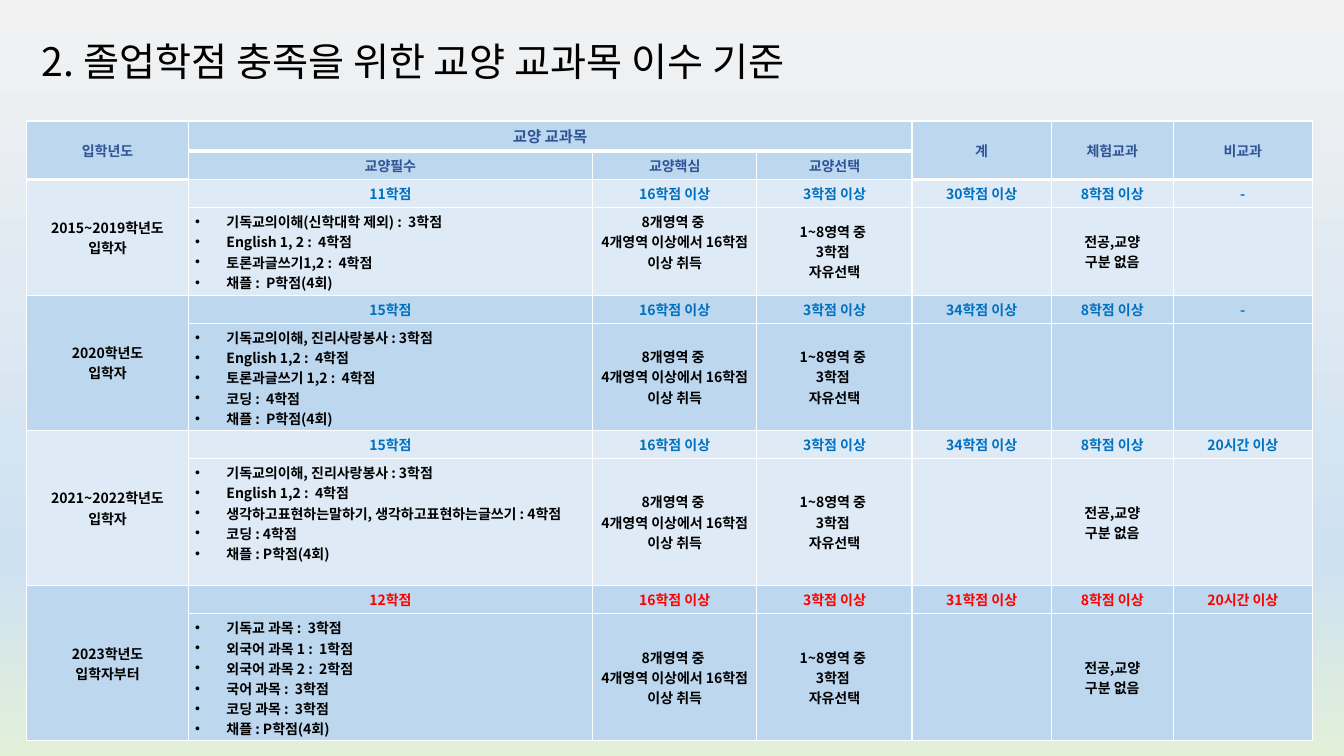
from dataclasses import dataclass

from lxml.etree import SubElement
from pptx import Presentation
from pptx.dml.color import RGBColor
from pptx.enum.text import MSO_ANCHOR, PP_ALIGN
from pptx.oxml import parse_xml
from pptx.oxml.ns import nsdecls, qn
from pptx.slide import Slide
from pptx.table import Table, _Cell
from pptx.text.text import _Paragraph
from pptx.util import Inches, Pt

BLACK = RGBColor(0x00, 0x00, 0x00)
WHITE = RGBColor(0xFF, 0xFF, 0xFF)
NAVY = RGBColor(0x2F, 0x55, 0x97)
BLUE = RGBColor(0x00, 0x70, 0xC0)
RED = RGBColor(0xFF, 0x00, 0x00)
PALE = RGBColor(0xDE, 0xEB, 0xF7)
SKY = RGBColor(0xBD, 0xD7, 0xEE)
GRAY = RGBColor(0xF2, 0xF2, 0xF2)
MIST = RGBColor(0xCE, 0xE1, 0xF2)
GREEN = RGBColor(0xE2, 0xF0, 0xD9)

FACE = "Noto Sans CJK KR"
WIDE, HIGH = Inches(13.33), Inches(7.5)
COLS = (1.6, 4.01, 1.63, 1.54, 1.38, 1.21, 1.38)
LINE = 0.28
TALL = (0, 4, 5, 6)  # header columns that span both header rows
MID, TOP = MSO_ANCHOR.MIDDLE, MSO_ANCHOR.TOP

CORE = ["8개영역 중 ", "4개영역 이상에서 16학점 이상 취득"]
FREE = ["1~8영역 중 ", "3학점 ", "자유선택"]
BOTH = ["전공,교양", "구분 없음"]


@dataclass
class Group:
    year: list[str]
    need: str
    total: str
    extra: str
    items: list[str]
    height: float
    trial: list[str]
    fill: RGBColor
    hue: RGBColor = BLUE
    anchor: MSO_ANCHOR = MID


GROUPS = [
    Group(["2015~2019학년도", "입학자"], "11학점", "30학점 이상", "-",
          ["기독교의이해(신학대학 제외) :  3학점", "English 1, 2 :  4학점",
           "토론과글쓰기1,2 :  4학점", "채플 :  P학점(4회)"],
          0.87, BOTH, PALE, anchor=TOP),
    Group(["2020학년도", "입학자"], "15학점", "34학점 이상", "-",
          ["기독교의이해, 진리사랑봉사 : 3학점", "English 1,2 :  4학점",
           "토론과글쓰기 1,2 :  4학점", "코딩 :  4학점", "채플 :  P학점(4회)"],
          1.06, [], SKY),
    Group(["2021~2022학년도", "입학자"], "15학점", "34학점 이상", "20시간 이상",
          ["기독교의이해, 진리사랑봉사 : 3학점", "English 1,2 :  4학점",
           "생각하고표현하는말하기, 생각하고표현하는글쓰기 : 4학점",
           "코딩 : 4학점", "채플 : P학점(4회)"],
          1.26, BOTH, PALE),
    Group(["2023학년도", "입학자부터"], "12학점", "31학점 이상", "20시간 이상",
          ["기독교 과목 :  3학점", "외국어 과목 1 :  1학점",
           "외국어 과목 2 :  2학점", "국어 과목 :  3학점",
           "코딩 과목 :  3학점", "채플 : P학점(4회)"],
          1.26, BOTH, SKY, RED),
]


def style(para: _Paragraph, size: float, hue: RGBColor, bold: bool) -> None:
    font = para.font
    font.size, font.bold, font.name = Pt(size), bold, FACE
    font.color.rgb = hue
    props = para._p.pPr.find(qn("a:defRPr"))
    props.find(qn("a:latin")).addnext(
        parse_xml(f'<a:ea {nsdecls("a")} typeface="{FACE}"/>'))


def write(cell: _Cell, lines: list[str], hue: RGBColor = BLACK,
          size: float = 10, anchor: MSO_ANCHOR = MID,
          list_on: bool = False) -> None:
    cell.vertical_anchor = anchor
    frame = cell.text_frame
    for num, line in enumerate(lines or [""]):
        para = frame.add_paragraph() if num else frame.paragraphs[0]
        para.text = line
        if list_on:
            props = para._p.get_or_add_pPr()
            props.set("marL", str(Inches(0.31)))
            props.set("indent", str(-Inches(0.31)))
            SubElement(props, qn("a:buFont")).set("typeface", "Arial")
            SubElement(props, qn("a:buChar")).set("char", "•")
        else:
            para.alignment = PP_ALIGN.CENTER
        style(para, size, hue, True)


def frame_cell(cell: _Cell, row: int, col: int, fill: RGBColor) -> None:
    cell.margin_left = cell.margin_right = Inches(0.07)
    cell.margin_top = cell.margin_bottom = Inches(0.04)
    cell.fill.solid()
    cell.fill.fore_color.rgb = fill
    upper = 3 if row == 1 or (row == 2 and col in TALL) else 1
    lower = 3 if row == 0 or (row == 1 and col in TALL) else 1
    sides = {"lnL": 1, "lnR": 1, "lnT": upper, "lnB": lower}
    for place, (side, width) in enumerate(sides.items()):
        cell._tc.tcPr.insert(place, parse_xml(
            f'<a:{side} {nsdecls("a")} w="{Pt(width)}"><a:solidFill>'
            f'<a:srgbClr val="{WHITE}"/></a:solidFill></a:{side}>'))


def paint_back(slide: Slide) -> None:
    fill = slide.background.fill
    fill.gradient()
    fill.gradient_angle = 270
    stops = slide._element.find(".//" + qn("a:gsLst"))
    for old in list(stops):
        stops.remove(old)
    for spot, hue, alpha in ((0, GRAY, 100), (74, MIST, 100), (100, GREEN, 32)):
        stop = SubElement(stops, qn("a:gs"), pos=str(spot * 1000))
        tint = SubElement(stop, qn("a:srgbClr"), val=str(hue))
        if alpha < 100:
            SubElement(tint, qn("a:alpha"), val=str(alpha * 1000))


def add_title(slide: Slide) -> None:
    box = slide.shapes.add_textbox(int(WIDE * 0.02), int(HIGH * 0.03),
                                   int(WIDE * 0.61), int(HIGH * 0.11))
    frame = box.text_frame
    frame.word_wrap = True
    frame.vertical_anchor = MID
    frame.margin_left, frame.margin_right = Inches(0.15), Inches(0.07)
    frame.margin_top = frame.margin_bottom = Inches(0.04)
    para = frame.paragraphs[0]
    para.text = "2. 졸업학점 충족을 위한 교양 교과목 이수 기준"
    para.line_spacing = 0.9
    style(para, 28, BLACK, False)


def fill_head(table: Table) -> None:
    for col, name in zip(TALL, ("입학년도", "계", "체험교과", "비교과")):
        write(table.cell(0, col), [name], NAVY)
        table.cell(0, col).merge(table.cell(1, col))
    write(table.cell(0, 1), ["교양 교과목"], NAVY, 11)
    table.cell(0, 1).merge(table.cell(0, 3))
    for col, name in enumerate(("교양필수", "교양핵심", "교양선택"), 1):
        write(table.cell(1, col), [name], NAVY)


def fill_group(table: Table, row: int, group: Group) -> None:
    write(table.cell(row, 0), group.year)
    table.cell(row, 0).merge(table.cell(row + 1, 0))
    sums = (group.need, "16학점 이상", "3학점 이상", group.total,
            "8학점 이상", group.extra)
    for col, text in enumerate(sums, 1):
        write(table.cell(row, col), [text], group.hue, anchor=TOP)
    write(table.cell(row + 1, 1), group.items, anchor=TOP, list_on=True)
    write(table.cell(row + 1, 2), CORE, anchor=group.anchor)
    for col, lines in enumerate((FREE, [], group.trial, []), 3):
        write(table.cell(row + 1, col), lines)


def add_grid(slide: Slide) -> None:
    rows = [0.3, LINE]
    fills = [SKY, SKY]
    for group in GROUPS:
        rows += [LINE, group.height]
        fills += [group.fill] * 2
    table = slide.shapes.add_table(
        len(rows), len(COLS), int(WIDE * 0.02), int(HIGH * 0.16),
        Inches(sum(COLS)), Inches(sum(rows))).table
    table.first_row = table.horz_banding = False
    for col, width in enumerate(COLS):
        table.columns[col].width = Inches(width)
    for row, height in enumerate(rows):
        table.rows[row].height = Inches(height)
        for col in range(len(COLS)):
            cell = table.cell(row, col)
            frame_cell(cell, row, col, fills[row])
            cell.text_frame.paragraphs[0].font.size = Pt(10)
    fill_head(table)
    for num, group in enumerate(GROUPS):
        fill_group(table, 2 + 2 * num, group)


def main() -> None:
    deck = Presentation()
    deck.slide_width, deck.slide_height = WIDE, HIGH
    slide = deck.slides.add_slide(deck.slide_layouts[6])
    # Backdrop and heading
    paint_back(slide)
    add_title(slide)
    # Credit table
    add_grid(slide)
    deck.save("out.pptx")


if __name__ == "__main__":
    main()
